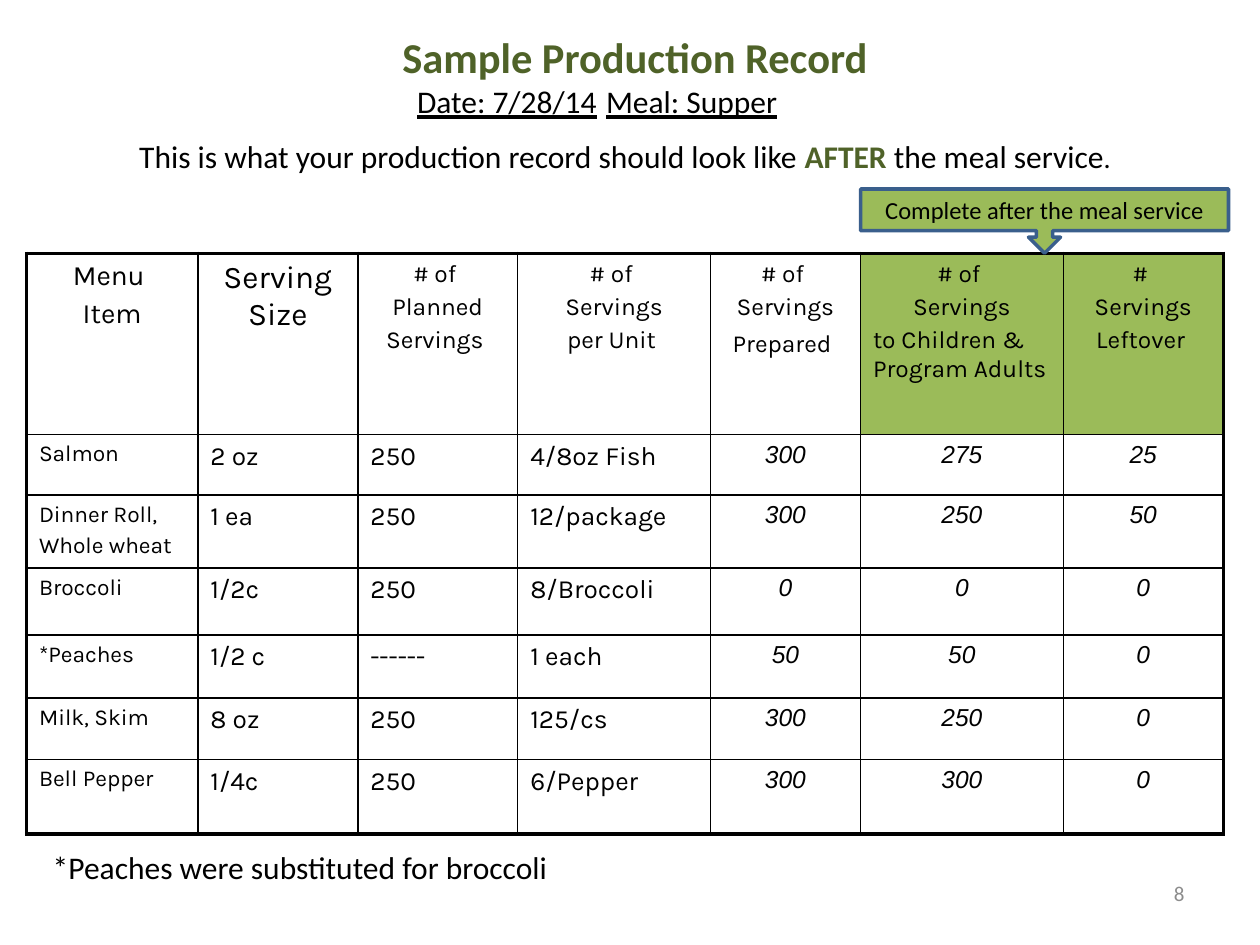
from lxml import etree
from pptx import Presentation
from pptx.dml.color import RGBColor
from pptx.enum.shapes import MSO_SHAPE
from pptx.enum.text import MSO_ANCHOR, PP_ALIGN
from pptx.oxml.ns import qn
from pptx.util import Inches, Pt

LEFT, CENTER, RIGHT = PP_ALIGN.LEFT, PP_ALIGN.CENTER, PP_ALIGN.RIGHT
MIDDLE = MSO_ANCHOR.MIDDLE
CALLOUT = MSO_SHAPE.DOWN_ARROW_CALLOUT

BLACK = RGBColor(0x00, 0x00, 0x00)
OLIVE = RGBColor(0x4F, 0x62, 0x28)
GREEN = RGBColor(0x9B, 0xBB, 0x59)
STEEL = RGBColor(0x3A, 0x5F, 0x8C)
GRAY = RGBColor(0x8C, 0x8C, 0x8C)

THIN, THICK = 1, 2.25
COLUMN_WIDTHS = [1.36, 1.27, 1.27, 1.53, 1.19, 1.61, 1.27]
ROW_HEIGHTS = [1.44, 0.48, 0.58, 0.53, 0.5, 0.49, 0.59]
FIRST_RESULT = 4
FIRST_AFTER_MEAL = 5

# Header: size, lines, size of the closing space
HEADERS = [
    (16, ["Menu ", "Item"], None),
    (18, ["Serving Size"], None),
    (14, ["# of ", "Planned", "Servings "], None),
    (14, ["# of ", "Servings", "per Unit"], 12),
    (14, ["# of ", "Servings", "Prepared"], 16),
    (14, ["# of ", "Servings", "to Children & Program Adults"], 12),
    (14, ["# ", "Servings", "Leftover"], 12),
]
MEAL_ITEMS = [
    ["Salmon", "2 oz", "250", "4/8oz Fish", "300", "275", "25"],
    ["Dinner Roll,\nWhole wheat", "1 ea", "250", "12/package", "300", "250", "50"],
    ["Broccoli", "1/2c", "250", "8/Broccoli", "0", "0", "0"],
    ["*Peaches", "1/2 c", "------", "1 each", "50", "50", "0"],
    ["Milk, Skim", "8 oz", "250", "125/cs", "300", "250", "0"],
    ["Bell Pepper", "1/4c", "250", "6/Pepper", "300", "300", "0"],
]


def set_font(font, size, color=BLACK, name="Calibri"):
    font.size, font.name = Pt(size), name
    font.color.rgb = color


def add_text_frame(slide, box):
    frame = slide.shapes.add_textbox(*map(Inches, box)).text_frame
    frame.word_wrap = True
    return frame


def add_line(slide, box, text, size, align=LEFT, color=BLACK, anchor=None):
    frame = add_text_frame(slide, box)
    if anchor is not None:
        frame.vertical_anchor = anchor
    line = frame.paragraphs[0]
    line.text, line.alignment = text, align
    set_font(line.font, size, color)


def add_title(slide, box):
    frame = add_text_frame(slide, box)
    frame.vertical_anchor = MIDDLE
    frame.margin_left = frame.margin_right = Inches(2.6)
    title = frame.paragraphs[0]
    title.text, title.alignment = "Sample Production Record", CENTER
    set_font(title.font, 24.3, OLIVE)
    title.font.bold = True

    date_meal = frame.add_paragraph()
    date_meal.text, date_meal.alignment = "Date: 7/28/14\tMeal: Supper", LEFT
    set_font(date_meal.font, 18)
    date_meal.font.underline = True
    properties = date_meal._p.get_or_add_pPr()
    properties.set("marL", str(Inches(0.17)))
    properties.set("indent", "0")
    tabs = etree.Element(qn("a:tabLst"))
    etree.SubElement(tabs, qn("a:tab"), pos=str(Inches(2.27)), algn="l")
    properties.insert(0, tabs)


def add_instruction(slide, box):
    sentence = add_text_frame(slide, box).paragraphs[0]
    sentence.alignment = CENTER
    for text, size, color, bold in [
        ("This is what your production record should look like ", 18, BLACK, False),
        ("AFTER ", 18, OLIVE, True),
        ("the meal service", 18, BLACK, False),
        (".", 16, BLACK, False),
    ]:
        run = sentence.add_run()
        run.text = text
        set_font(run.font, size, color)
        run.font.bold = bold


def add_callout(slide, box):
    callout = slide.shapes.add_shape(CALLOUT, *map(Inches, box))
    callout.shadow.inherit = False
    callout.fill.solid()
    callout.fill.fore_color.rgb = GREEN
    callout.line.color.rgb = STEEL
    callout.line.width = Pt(2)
    callout.text_frame.vertical_anchor = MIDDLE
    label = callout.text_frame.paragraphs[0]
    label.text, label.alignment = "Complete after the meal service", CENTER
    set_font(label.font, 14)


def set_borders(cell, widths):
    properties = cell._tc.get_or_add_tcPr()
    for position, (side, width) in enumerate(widths.items()):
        border = etree.Element(qn(f"a:{side}"), w=str(Pt(width)))
        fill = etree.SubElement(border, qn("a:solidFill"))
        etree.SubElement(fill, qn("a:srgbClr"), val=str(BLACK))
        properties.insert(position, border)


def fill_cell(cell, lines, size, align, name="Karla", italic=False):
    frame = cell.text_frame
    frame.text = "\n".join(lines)
    for line in frame.paragraphs:
        line.alignment = align
        line.space_before = Pt(size * 0.2)
        set_font(line.font, size, name=name)
        line.font.bold, line.font.italic = False, italic


def fill_header(cell, column):
    size, lines, closing_size = HEADERS[column]
    fill_cell(cell, lines, size, CENTER)
    last_line = cell.text_frame.paragraphs[-1]
    if column == FIRST_AFTER_MEAL:
        last_line.alignment = LEFT
    if closing_size:
        closing = last_line.add_run()
        closing.text = " "
        set_font(closing.font, closing_size, name="Karla")


def add_record(slide, box):
    row_count, column_count = len(ROW_HEIGHTS), len(COLUMN_WIDTHS)
    record = slide.shapes.add_table(row_count, column_count, *map(Inches, box)).table
    record.first_row = record.horz_banding = False
    for column, width in zip(record.columns, COLUMN_WIDTHS):
        column.width = Inches(width)
    for row, height in zip(record.rows, ROW_HEIGHTS):
        row.height = Inches(height)

    for r in range(row_count):
        for c in range(column_count):
            cell = record.cell(r, c)
            if r == 0:
                fill_header(cell, c)
            elif c >= FIRST_RESULT:
                fill_cell(cell, [MEAL_ITEMS[r - 1][c]], 14, CENTER, "Arial", True)
            else:
                lines = MEAL_ITEMS[r - 1][c].split("\n")
                fill_cell(cell, lines, 13 if c == 0 else 15, LEFT)
            if r == 0 and c >= FIRST_AFTER_MEAL:
                cell.fill.solid()
                cell.fill.fore_color.rgb = GREEN
            else:
                cell.fill.background()
            set_borders(cell, {
                "lnL": THICK if c == 0 else THIN,
                "lnR": THICK if c == column_count - 1 else THIN,
                "lnT": THICK if r == 0 else THIN,
                "lnB": THICK if r == row_count - 1 else THIN,
            })


def main():
    deck = Presentation()
    deck.slide_width, deck.slide_height = Inches(10), Inches(7.5)
    slide = deck.slides.add_slide(deck.slide_layouts[6])
    add_title(slide, (0.54, 0.16, 9, 0.88))
    add_record(slide, (0.21, 2.01, 9.5, 4.61))
    add_line(slide, (7.17, 6.83, 2.33, 0.52), "8", 12, RIGHT, GRAY, MIDDLE)
    add_instruction(slide, (0.17, 1.04, 9.58, 0.4))
    add_line(slide, (0.32, 6.68, 9.25, 0.4),
             "*Peaches were substituted for broccoli", 18)
    add_callout(slide, (6.83, 1.5, 2.92, 0.51))
    deck.save("out.pptx")


if __name__ == "__main__":
    main()
